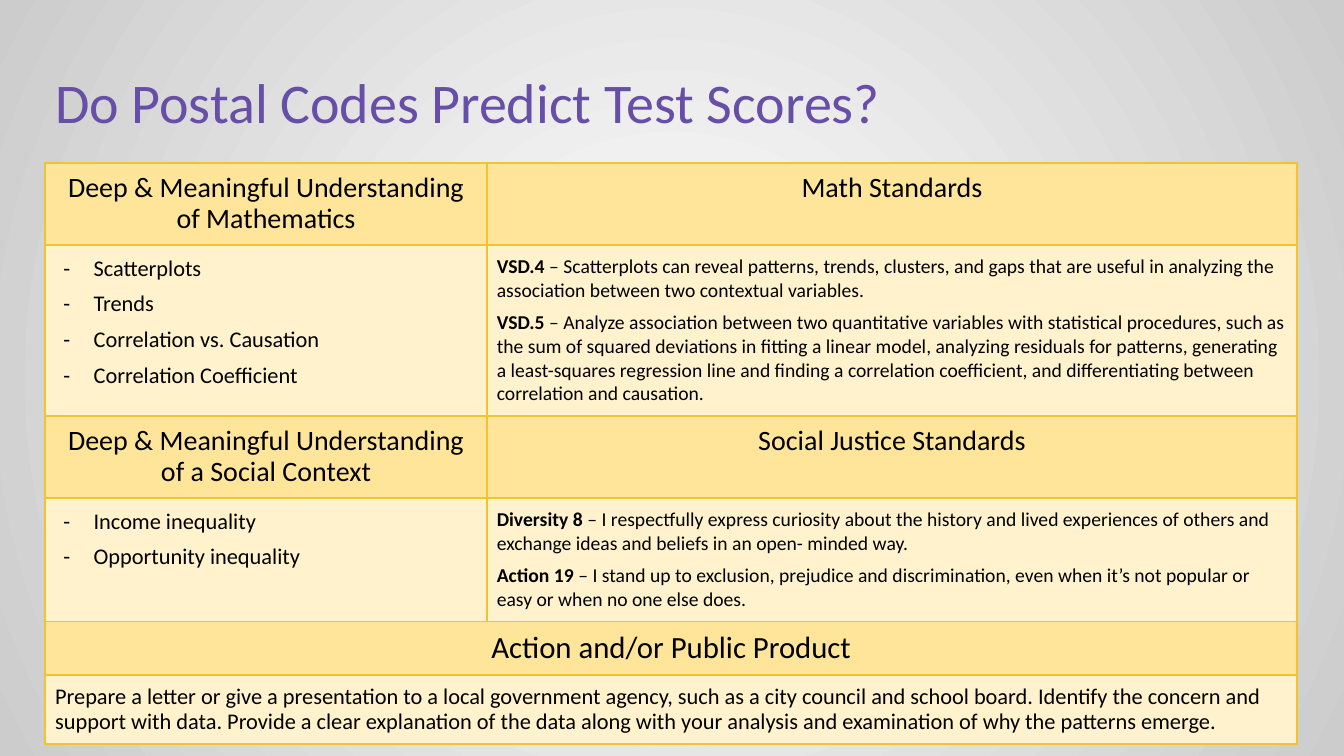
from dataclasses import dataclass

from pptx import Presentation, oxml, util as u
from pptx.dml import color
from pptx.enum import text
from pptx.oxml import ns

HUES = {
    "title": "674EA7", "ink": "000000", "head": "FFE599", "body": "FFF2CC",
    "edge": "F1C232", "inner": "FFFFFF", "outer": "CCCCCC",
}
FONT = "Calibri"
SPACE = ns.nsdecls("a")
PAD = {f"margin_{side}": u.Cm(0.25) for side in ("left", "top", "right", "bottom")}
COLS = [11.13, 20.42]
ROWS = [1.78, 3.96, 1.85, 3.02, 1.35, 1.45]
LEFT, TOP = 1.14, 4.11


@dataclass
class Para:
    words: str
    size: int
    code: str = ""
    dash: bool = False
    tight: bool = False
    center: bool = False
    before: int = 0
    after: int = 0


@dataclass
class Block:
    row: int
    col: int
    paras: list[Para]
    fill: str = "body"
    wide: bool = False


def apply(item, values: dict) -> None:
    for name, value in values.items():
        setattr(item, name, value)


def rgb(name: str) -> color.RGBColor:
    return color.RGBColor.from_string(HUES[name])


def head(row: int, col: int, words: str, size: int = 20, wide: bool = False) -> Block:
    return Block(row, col, [Para(words, size, tight=True, center=True)], "head", wide)


def topics(row: int, *items: str) -> Block:
    last = len(items) - 1
    return Block(row, 0, [
        Para(item, 16, dash=True, before=6 if i else 0, after=6 if i == last else 0)
        for i, item in enumerate(items)
    ])


def norms(row: int, *pairs: tuple[str, str]) -> Block:
    return Block(row, 1, [
        Para(f" – {words}", 14, code, before=6 if i else 0, after=3 if i else 0)
        for i, (code, words) in enumerate(pairs)
    ])


BLOCKS = [
    head(0, 0, "Deep & Meaningful Understanding of Mathematics"),
    head(0, 1, "Math Standards"),
    topics(1, "Scatterplots", "Trends", "Correlation vs. Causation", "Correlation Coefficient"),
    norms(
        1,
        ("VSD.4", "Scatterplots can reveal patterns, trends, clusters, and gaps that are "
         "useful in analyzing the association between two contextual variables."),
        ("VSD.5", "Analyze association between two quantitative variables with statistical "
         "procedures, such as the sum of squared deviations in fitting a linear model, "
         "analyzing residuals for patterns, generating a least-squares regression line and "
         "finding a correlation coefficient, and differentiating between correlation and "
         "causation."),
    ),
    head(2, 0, "Deep & Meaningful Understanding of a Social Context"),
    head(2, 1, "Social Justice Standards"),
    topics(3, "Income inequality", "Opportunity inequality"),
    norms(
        3,
        ("Diversity 8", "I respectfully express curiosity about the history and lived "
         "experiences of others and exchange ideas and beliefs in an open- minded way."),
        ("Action 19", "I stand up to exclusion, prejudice and discrimination, even when "
         "it’s not popular or easy or when no one else does."),
    ),
    head(4, 0, "Action and/or Public Product", 22, True),
    Block(5, 0, [Para(
        "Prepare a letter or give a presentation to a local government agency, such as a "
        "city council and school board. Identify the concern and support with data. Provide "
        "a clear explanation of the data along with your analysis and examination of why "
        "the patterns emerge.", 16, tight=True)], wide=True),
]


def add_run(line, words: str, size: int, hue: str, bold: bool = False) -> None:
    run = line.add_run()
    run.text = words
    apply(run.font, {"name": FONT, "size": u.Pt(size), "bold": bold})
    run.font.color.rgb = rgb(hue)


def write(line, para: Para, hue: str = "ink") -> None:
    align = text.PP_ALIGN.CENTER if para.center else text.PP_ALIGN.LEFT
    apply(line, {
        "alignment": align,
        "line_spacing": 0.9 if para.tight else 1.0,
        "space_before": u.Pt(para.before),
        "space_after": u.Pt(para.after),
    })
    if para.dash:
        props = line._p.get_or_add_pPr()
        props.set("marL", str(u.Cm(0.97)))
        props.set("indent", str(u.Cm(-0.76)))
        props.append(oxml.parse_xml(
            f'<a:buClr {SPACE}><a:srgbClr val="{HUES["ink"]}"/></a:buClr>'))
        props.append(oxml.parse_xml(f'<a:buFont {SPACE} typeface="{FONT}"/>'))
        props.append(oxml.parse_xml(f'<a:buChar {SPACE} char="-"/>'))
    if para.code:
        add_run(line, para.code, para.size, hue, True)
    add_run(line, para.words, para.size, hue)


def frame(cell) -> None:
    props = cell._tc.get_or_add_tcPr()
    for i, side in enumerate("LRTB"):
        props.insert(i, oxml.parse_xml(
            f'<a:ln{side} {SPACE} w="{u.Pt(1.5)}"><a:solidFill>'
            f'<a:srgbClr val="{HUES["edge"]}"/></a:solidFill></a:ln{side}>'))


def draw(table, block: Block) -> None:
    cell = table.cell(block.row, block.col)
    if block.wide:
        cell.merge(table.cell(block.row, len(COLS) - 1))
    body = cell.text_frame
    for i, para in enumerate(block.paras):
        write(body.add_paragraph() if i else body.paragraphs[0], para)
    for part in list(table.rows[block.row].cells)[block.col:None if block.wide else block.col + 1]:
        apply(part, PAD)
        part.fill.solid()
        part.fill.fore_color.rgb = rgb(block.fill)
        frame(part)


def shade(slide) -> None:
    fill = slide.background.fill
    fill.gradient()
    for stop, name in zip(fill.gradient_stops, ("inner", "outer")):
        stop.color.rgb = rgb(name)
    grad = slide.element.find(f".//{ns.qn('a:gradFill')}")
    grad.replace(grad.find(ns.qn("a:lin")), oxml.parse_xml(
        f'<a:path {SPACE} path="circle">'
        '<a:fillToRect l="50000" t="50000" r="50000" b="50000"/></a:path>'))


def main() -> None:
    deck = Presentation()
    apply(deck, {"slide_width": u.Cm(33.87), "slide_height": u.Cm(19.05)})
    slide = deck.slides.add_slide(deck.slide_layouts[5])
    shade(slide)

    title = slide.shapes.title
    apply(title, {"left": u.Cm(LEFT), "top": u.Cm(1.65),
                  "width": u.Cm(sum(COLS)), "height": u.Cm(2.11)})
    apply(title.text_frame, PAD | {
        "word_wrap": True, "auto_size": text.MSO_AUTO_SIZE.NONE,
        "vertical_anchor": text.MSO_ANCHOR.TOP})
    write(title.text_frame.paragraphs[0],
          Para("Do Postal Codes Predict Test Scores?", 40, tight=True), "title")

    table = slide.shapes.add_table(
        len(ROWS), len(COLS), u.Cm(LEFT), u.Cm(TOP),
        u.Cm(sum(COLS)), u.Cm(sum(ROWS))).table
    apply(table, {"first_row": False, "horz_banding": False})
    for col, width in zip(table.columns, COLS):
        col.width = u.Cm(width)
    for row, height in zip(table.rows, ROWS):
        row.height = u.Cm(height)
    for block in BLOCKS:
        draw(table, block)

    deck.save("out.pptx")


if __name__ == "__main__":
    main()
